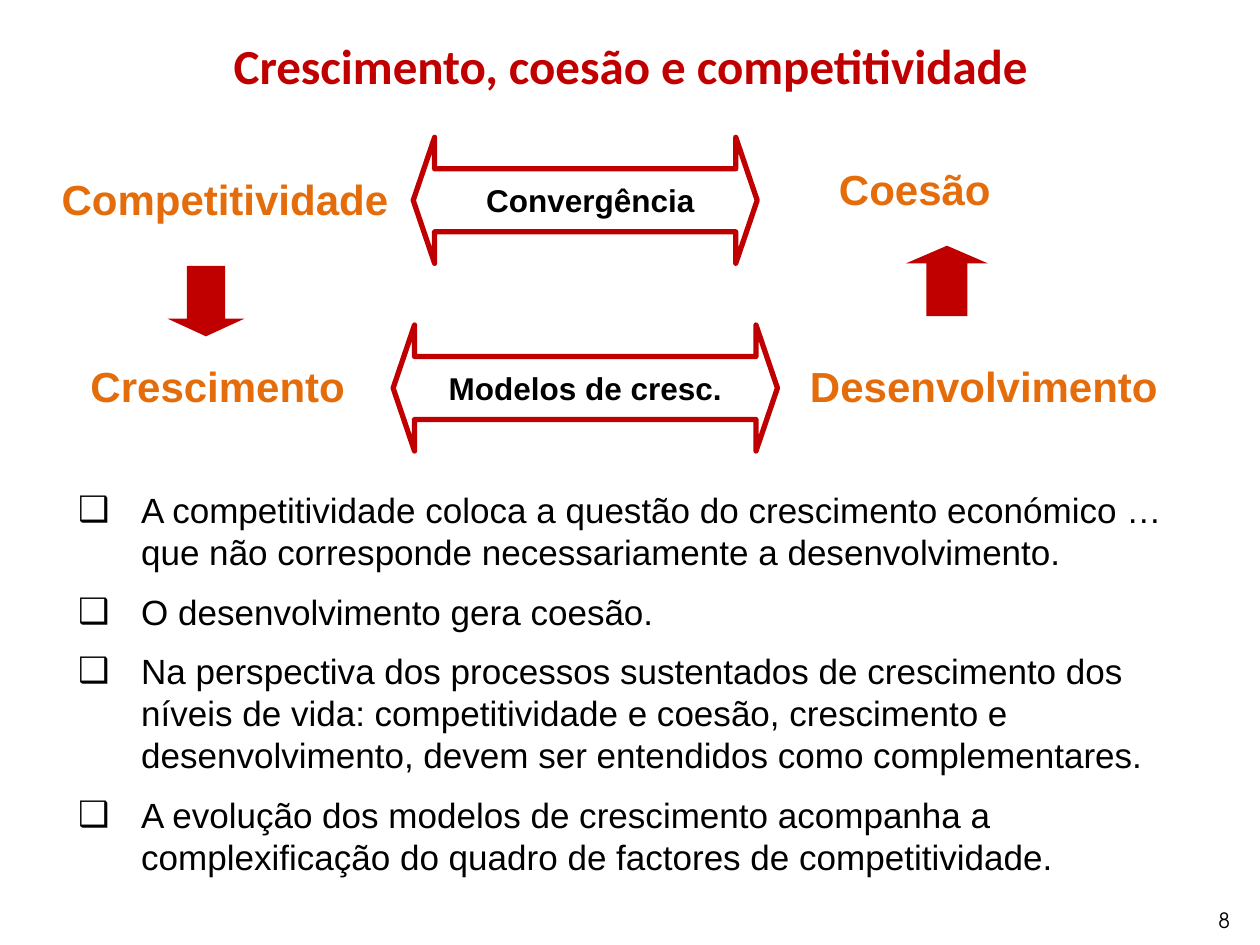
from dataclasses import dataclass

from lxml import etree
from pptx import Presentation
from pptx.dml.color import RGBColor
from pptx.enum.shapes import MSO_SHAPE
from pptx.enum.text import MSO_ANCHOR, MSO_AUTO_SIZE, PP_ALIGN
from pptx.oxml.ns import qn
from pptx.util import Inches, Pt

LEFT, CENTER, RIGHT = PP_ALIGN.LEFT, PP_ALIGN.CENTER, PP_ALIGN.RIGHT
DOUBLE_ARROW, DOWN_ARROW = MSO_SHAPE.LEFT_RIGHT_ARROW, MSO_SHAPE.DOWN_ARROW


@dataclass(frozen=True)
class Theme:
    red: RGBColor = RGBColor(0xC0, 0x00, 0x00)
    orange: RGBColor = RGBColor(0xE4, 0x6C, 0x0A)
    black: RGBColor = RGBColor(0x00, 0x00, 0x00)
    white: RGBColor = RGBColor(0xFF, 0xFF, 0xFF)
    font: str = "Arial"
    title_font: str = "Calibri"
    number_font: str = "TeX Gyre Adventor"
    title: int = 28
    concept: int = 24
    body: int = 20
    link: int = 18
    number: int = 12


THEME = Theme()

# Content
TITLE = "Crescimento, coesão e competitividade"
BULLETS = [
    "A competitividade coloca a questão do crescimento económico … "
    "que não corresponde necessariamente a desenvolvimento.",
    "O desenvolvimento gera coesão.",
    "Na perspectiva dos processos sustentados de crescimento dos níveis de vida: "
    "competitividade e coesão, crescimento e desenvolvimento, devem ser entendidos "
    "como complementares.",
    "A evolução dos modelos de crescimento acompanha a complexificação do quadro "
    "de factores de competitividade.",
]
PAGE_NUMBER = "8"

# Diagram, in inches: concepts (text, left, top, width)
CONCEPTS = [
    ("Competitividade", 0.39, 1.33, 2.81),
    ("Coesão", 6.56, 1.25, 1.41),
    ("Crescimento", 0.62, 2.81, 2.34),
    ("Desenvolvimento", 6.33, 2.81, 3.12),
]
# Double arrows (text, arrow left, top, width, text left, text width)
LINKS = [
    ("Convergência", 3.28, 1.09, 2.73, 3.67, 2.03),
    ("Modelos de cresc.", 3.12, 2.58, 3.05, 3.2, 2.89),
]
# Vertical arrows (left, top, width, rotation)
STEPS = [(1.33, 2.11, 0.61, 0), (7.19, 1.95, 0.65, 180)]
CONCEPT_HEIGHT, LINK_HEIGHT, LINK_TEXT_HEIGHT, STEP_HEIGHT = 0.51, 1, 0.4, 0.56


def place(shape, left, top, width, height):
    shape.left, shape.top = Inches(left), Inches(top)
    shape.width, shape.height = Inches(width), Inches(height)


def style(frame, size, color, bold=False, font=THEME.font, align=LEFT):
    frame.auto_size = MSO_AUTO_SIZE.NONE
    frame.vertical_anchor = MSO_ANCHOR.TOP
    for para in frame.paragraphs:
        para.alignment = align
        para.space_before = Pt(0)
        for span in para.runs:
            span.font.name, span.font.size = font, Pt(size)
            span.font.bold, span.font.color.rgb = bold, color


def add_label(page, text, area, size, color, **look):
    box = page.shapes.add_textbox(*map(Inches, area))
    box.text_frame.text = text
    box.text_frame.word_wrap = False
    style(box.text_frame, size, color, **look)


def add_arrow(page, kind, area, fill, adjustments):
    arrow = page.shapes.add_shape(kind, *map(Inches, area))
    arrow.shadow.inherit = False
    arrow.fill.solid()
    arrow.fill.fore_color.rgb = fill
    for index, value in enumerate(adjustments):
        arrow.adjustments[index] = value
    return arrow


def add_bullet(para):
    para.space_after = Pt(10)
    properties = para._p.get_or_add_pPr()
    properties.set("marL", str(Inches(0.55)))
    properties.set("indent", str(Inches(-0.5)))
    etree.SubElement(properties, qn("a:buChar")).set("char", "❑")


def main():
    deck = Presentation()
    deck.slide_width, deck.slide_height = Inches(10), Inches(7.5)
    page = deck.slides.add_slide(deck.slide_layouts[1])

    # Title
    title = page.shapes.title
    place(title, 0.55, 0.23, 8.91, 0.57)
    title.text_frame.text = TITLE
    style(title.text_frame, THEME.title, THEME.red, True, THEME.title_font, CENTER)

    # Bulleted list
    body = page.placeholders[1]
    place(body, 0.47, 3.83, 9.14, 3.27)
    body.text_frame.text = "\n".join(BULLETS)
    style(body.text_frame, THEME.body, THEME.black)
    for para in body.text_frame.paragraphs:
        add_bullet(para)

    # Concepts
    for text, left, top, width in CONCEPTS:
        add_label(page, text, (left, top, width, CONCEPT_HEIGHT),
                  THEME.concept, THEME.orange, bold=True)

    # Vertical arrows
    for left, top, width, rotation in STEPS:
        arrow = add_arrow(page, DOWN_ARROW, (left, top, width, STEP_HEIGHT),
                          THEME.red, (0.5, 0.25))
        arrow.line.fill.background()
        arrow.rotation = rotation

    # Double arrows, each with its text in the middle of its height
    for text, left, top, width, text_left, text_width in LINKS:
        arrow = add_arrow(page, DOUBLE_ARROW, (left, top, width, LINK_HEIGHT),
                          THEME.white, (0.5, 0.17))
        arrow.line.color.rgb = THEME.red
        arrow.line.width = Pt(3)
        text_top = top + (LINK_HEIGHT - LINK_TEXT_HEIGHT) / 2
        add_label(page, text, (text_left, text_top, text_width, LINK_TEXT_HEIGHT),
                  THEME.link, THEME.black, bold=True, align=CENTER)

    # Page number
    add_label(page, PAGE_NUMBER, (7.78, 7.15, 2.08, 0.25), THEME.number,
              THEME.black, font=THEME.number_font, align=RIGHT)

    deck.save("out.pptx")


if __name__ == "__main__":
    main()
